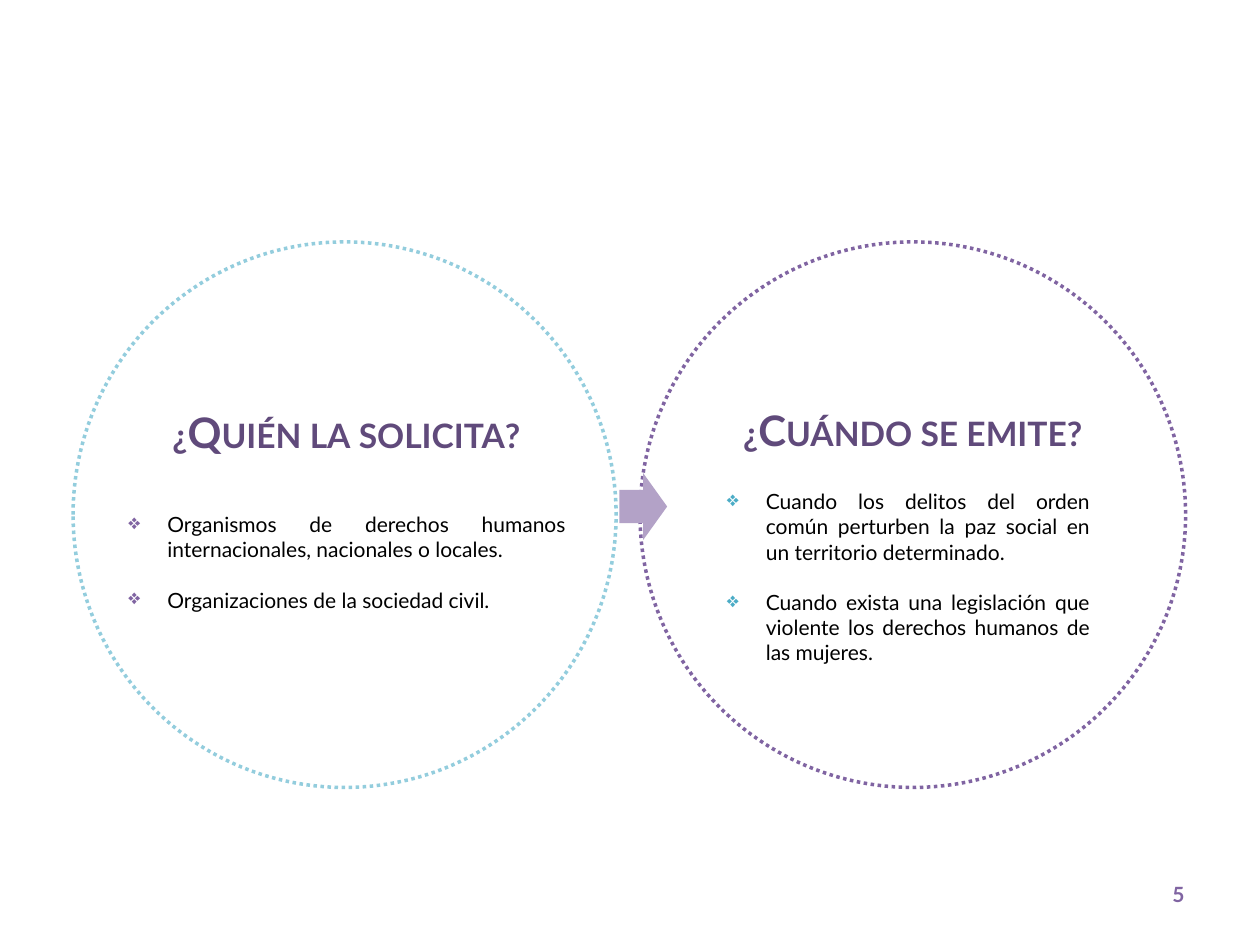
from lxml import etree
from pptx import Presentation
from pptx.dml.color import RGBColor
from pptx.enum.dml import MSO_LINE
from pptx.enum.shapes import MSO_SHAPE
from pptx.enum.text import PP_ALIGN
from pptx.oxml.ns import qn
from pptx.util import Inches, Pt

DOTTED = MSO_LINE.ROUND_DOT
OVAL, DOWN_ARROW = MSO_SHAPE.OVAL, MSO_SHAPE.DOWN_ARROW
LEFT, CENTER, RIGHT, JUSTIFY = PP_ALIGN.LEFT, PP_ALIGN.CENTER, PP_ALIGN.RIGHT, PP_ALIGN.JUSTIFY

FONT = "Lato"
BULLET = "❖"
PURPLE, DARK_PURPLE, LILAC = "8064A2", "604A7B", "B3A2C7"
SKY, TEAL, BLACK, WHITE = "93CDDD", "4BACC6", "000000", "FFFFFF"

TOPICS = [
    {
        "question": "¿Cuándo se emite?",
        "answers": [
            "Cuando los delitos del orden común perturben la paz social en un territorio determinado.",
            "Cuando exista una legislación que violente los derechos humanos de las mujeres.",
        ],
        "ring": (5.08, 1.92, 4.33, 4.33),
        "ring_color": PURPLE,
        "question_box": (5.08, 3.16, 4.33, 0.5),
        "answers_box": (5.67, 3.83, 3.08, 1.51),
        "bullet_color": TEAL,
    },
    {
        "question": "¿Quién la solicita?",
        "answers": [
            "Organismos de derechos humanos internacionales, nacionales o locales.",
            "Organizaciones de la sociedad civil.",
        ],
        "ring": (0.58, 1.92, 4.31, 4.33),
        "ring_color": SKY,
        "question_box": (0.6, 3.18, 4.3, 0.5),
        "answers_box": (0.92, 4.01, 3.67, 0.91),
        "bullet_color": PURPLE,
    },
]
ARROW_BOX = (4.84, 3.83, 0.53, 0.38)
PAGE_NUMBER = "5"
PAGE_NUMBER_BOX = (7.17, 6.95, 2.33, 0.4)


def rgb(color):
    return RGBColor.from_string(color)


def add_filled(slide, kind, box, color):
    shape = slide.shapes.add_shape(kind, *map(Inches, box))
    shape.shadow.inherit = False
    shape.fill.solid()
    shape.fill.fore_color.rgb = rgb(color)
    return shape


def add_ring(slide, box, color):
    ring = add_filled(slide, OVAL, box, WHITE)
    ring.line.color.rgb = rgb(color)
    ring.line.width = Pt(2)
    ring.line.dash_style = DOTTED


def add_bullet(paragraph, color):
    properties = paragraph._p.get_or_add_pPr()
    properties.set("marL", str(Inches(0.31)))
    properties.set("indent", str(Inches(-0.31)))
    bullet_color = etree.SubElement(properties, qn("a:buClr"))
    etree.SubElement(bullet_color, qn("a:srgbClr"), val=color)
    etree.SubElement(properties, qn("a:buChar"), char=BULLET)


def add_text(slide, box, lines, size, color, align, bold=False, bullet_color=None):
    frame = slide.shapes.add_textbox(*map(Inches, box)).text_frame
    frame.word_wrap = True
    frame.text = "\n".join(lines)
    for index, paragraph in enumerate(frame.paragraphs):
        paragraph.alignment = align
        if index:
            paragraph.space_before = Pt(size * 1.2)
        if bullet_color:
            add_bullet(paragraph, bullet_color)
        font = paragraph.runs[0].font
        font.name = FONT
        font.size = Pt(size)
        font.bold = bold
        font.color.rgb = rgb(color)
    return frame


def add_question(slide, box, question):
    frame = add_text(slide, box, [question], 24, DARK_PURPLE, CENTER, bold=True)
    frame.paragraphs[0].runs[0]._r.get_or_add_rPr().set("cap", "small")


def main():
    deck = Presentation()
    deck.slide_width, deck.slide_height = Inches(10), Inches(7.5)
    slide = deck.slides.add_slide(deck.slide_layouts[6])

    for topic in TOPICS:
        add_ring(slide, topic["ring"], topic["ring_color"])
    for topic in TOPICS:
        add_question(slide, topic["question_box"], topic["question"])
        add_text(slide, topic["answers_box"], topic["answers"], 12, BLACK, JUSTIFY,
                 bullet_color=topic["bullet_color"])

    arrow = add_filled(slide, DOWN_ARROW, ARROW_BOX, LILAC)
    arrow.line.fill.background()
    arrow.rotation = 270

    add_text(slide, PAGE_NUMBER_BOX, [PAGE_NUMBER], 12, PURPLE, RIGHT, bold=True)
    deck.save("out.pptx")


if __name__ == "__main__":
    main()
